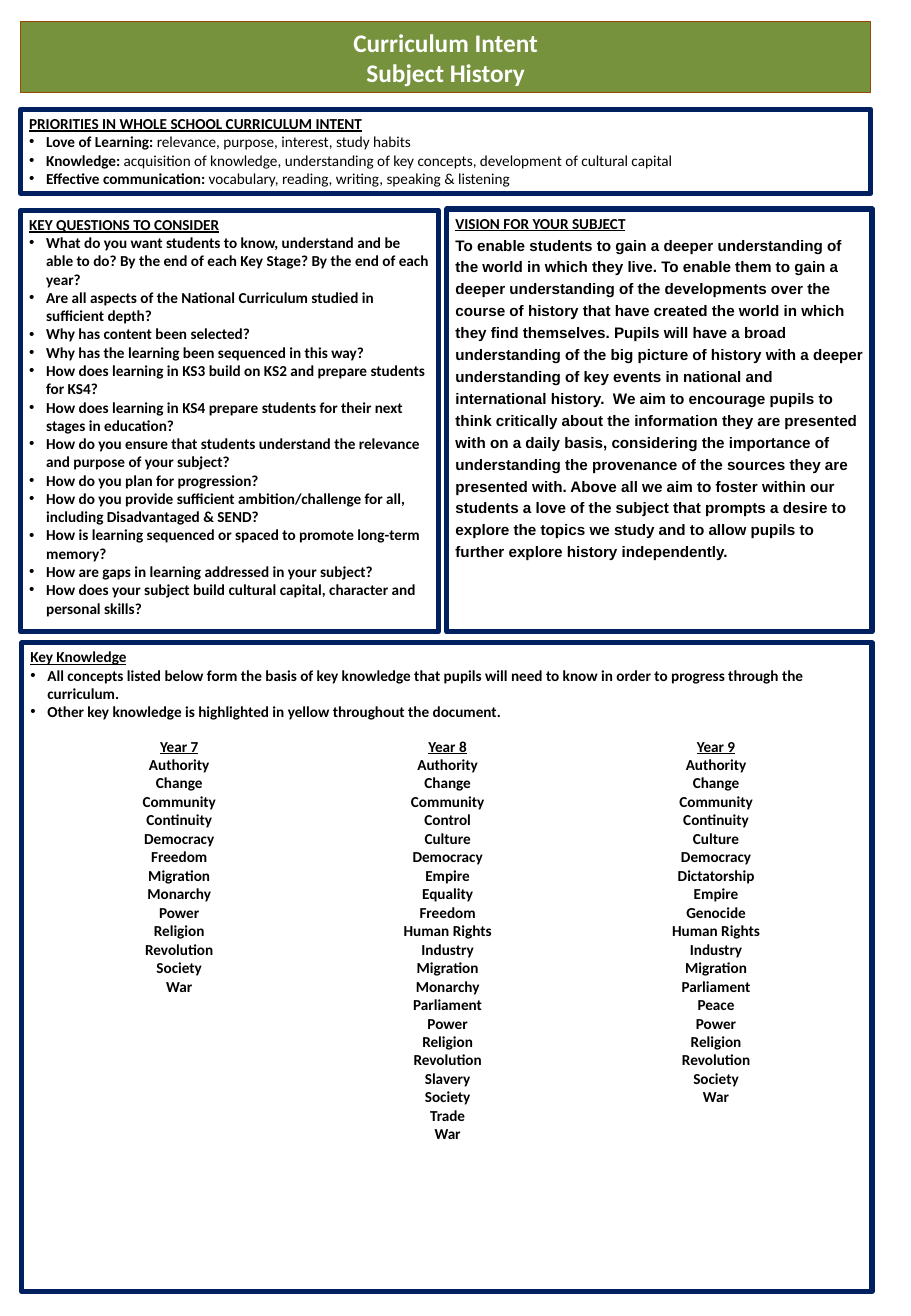
import dataclasses

import lxml.etree
import pptx
import pptx.dml.color
import pptx.enum.shapes
import pptx.enum.text
import pptx.oxml.ns
import pptx.util

Inches = pptx.util.Inches
Pt = pptx.util.Pt
ALIGN = pptx.enum.text.PP_ALIGN
ANCHOR = pptx.enum.text.MSO_ANCHOR


def rgb(code: str) -> pptx.dml.color.RGBColor:
    return pptx.dml.color.RGBColor.from_string(code)


@dataclasses.dataclass(frozen=True)
class Theme:
    green: str = "76923C"
    brown: str = "974806"
    navy: str = "002060"
    white: str = "FFFFFF"
    black: str = "000000"
    main: str = "Calibri"
    prose: str = "Arial"
    title: float = 15
    body: float = 9


THEME = Theme()


@dataclasses.dataclass(frozen=True)
class Line:
    """One paragraph: a bold lead, then an optional plain rest."""
    lead: str
    rest: str = ""
    under: bool = False
    bullet: bool = False
    align: ALIGN = ALIGN.LEFT
    face: str = THEME.main
    size: float = THEME.body
    ink: str = THEME.black
    space: float = 1.0


@dataclasses.dataclass(frozen=True)
class Panel:
    left: float
    top: float
    width: float
    height: float
    lines: list[Line]
    fill: str = THEME.white
    edge: str = THEME.navy
    weight: float = 3
    anchor: ANCHOR = ANCHOR.TOP


def head(text: str) -> Line:
    return Line(text, under=True)


def point(lead: str, rest: str = "") -> Line:
    return Line(lead, rest, bullet=True)


def banner(text: str) -> Line:
    return Line(text, align=ALIGN.CENTER, size=THEME.title, ink=THEME.white)


PANELS = [
    Panel(0.17, 0.18, 7, 0.58, [banner("Curriculum Intent"), banner("Subject History")],
          THEME.green, THEME.brown, 0.75, ANCHOR.MIDDLE),
    Panel(0.17, 0.9, 7, 0.69, [
        head("PRIORITIES IN WHOLE SCHOOL CURRICULUM INTENT"),
        point("Love of Learning: ", "relevance, purpose, interest, study habits"),
        point("Knowledge: ", "acquisition of knowledge, understanding of key concepts, "
              "development of cultural capital"),
        point("Effective communication: ", "vocabulary, reading, writing, speaking & listening"),
    ]),
    Panel(0.17, 1.73, 3.44, 3.47, [head("KEY QUESTIONS TO CONSIDER")] + [point(ask) for ask in (
        "What do you want students to know, understand and be able to do? "
        "By the end of each Key Stage? By the end of each year?",
        "Are all aspects of the National Curriculum studied in sufficient depth?",
        "Why has content been selected?",
        "Why has the learning been sequenced in this way?",
        "How does learning in KS3 build on KS2 and prepare students for KS4?",
        "How does learning in KS4 prepare students for their next stages in education?",
        "How do you ensure that students understand the relevance and purpose of your subject?",
        "How do you plan for progression?",
        "How do you provide sufficient ambition/challenge for all, "
        "including Disadvantaged & SEND?",
        "How is learning sequenced or spaced to promote long-term memory?",
        "How are gaps in learning addressed in your subject?",
        "How does your subject build cultural capital, character and personal skills?",
    )]),
    Panel(3.68, 1.72, 3.5, 3.48, [
        head("VISION FOR YOUR SUBJECT"),
        Line("To enable students to gain a deeper understanding of the world in which they live. "
             "To enable them to gain a deeper understanding of the developments over the course "
             "of history that have created the world in which they find themselves. Pupils will "
             "have a broad understanding of the big picture of history with a deeper "
             "understanding of key events in national and international history.  We aim to "
             "encourage pupils to think critically about the information they are presented with "
             "on a daily basis, considering the importance of understanding the provenance of "
             "the sources they are presented with. Above all we aim to foster within our "
             "students a love of the subject that prompts a desire to explore the topics we "
             "study and to allow pupils to further explore history independently.",
             face=THEME.prose, space=1.2),
    ]),
    Panel(0.18, 5.29, 7, 5.34, [
        head("Key Knowledge"),
        point("All concepts listed below form the basis of key knowledge that pupils will need "
              "to know in order to progress through the curriculum."),
        point("Other key knowledge is highlighted in yellow throughout the document."),
    ]),
]

YEARS = {
    "Year 7": "Authority, Change, Community, Continuity, Democracy, Freedom, Migration, "
              "Monarchy, Power, Religion, Revolution, Society, War",
    "Year 8": "Authority, Change, Community, Control, Culture, Democracy, Empire, Equality, "
              "Freedom, Human Rights, Industry, Migration, Monarchy, Parliament, Power, "
              "Religion, Revolution, Slavery, Society, Trade, War",
    "Year 9": "Authority, Change, Community, Continuity, Culture, Democracy, Dictatorship, "
              "Empire, Genocide, Human Rights, Industry, Migration, Parliament, Peace, Power, "
              "Religion, Revolution, Society, War",
}


def add_bullet(para) -> None:
    props = para._p.get_or_add_pPr()
    props.set("marL", str(Inches(0.14)))
    props.set("indent", str(Inches(-0.14)))
    qn = pptx.oxml.ns.qn
    tint = lxml.etree.SubElement(props, qn("a:buClr"))
    lxml.etree.SubElement(tint, qn("a:srgbClr"), val=THEME.black)
    lxml.etree.SubElement(props, qn("a:buFont"), typeface=THEME.prose)
    lxml.etree.SubElement(props, qn("a:buChar"), char="•")


def write(frame, lines: list[Line]) -> None:
    frame.word_wrap = True
    for index, line in enumerate(lines):
        para = frame.add_paragraph() if index else frame.paragraphs[0]
        if line.bullet:
            add_bullet(para)
        para.alignment = line.align
        para.line_spacing = line.space
        font = para.font
        font.name, font.size = line.face, Pt(line.size)
        font.color.rgb = rgb(line.ink)
        font.underline = line.under
        lead = para.add_run()
        lead.text = line.lead
        if line.rest:
            lead.font.bold = True
            para.add_run().text = line.rest
        else:
            font.bold = True


def add_panel(slide, panel: Panel) -> None:
    spot = map(Inches, (panel.left, panel.top, panel.width, panel.height))
    shape = slide.shapes.add_shape(pptx.enum.shapes.MSO_SHAPE.RECTANGLE, *spot)
    shape.shadow.inherit = False
    shape.fill.solid()
    shape.fill.fore_color.rgb = rgb(panel.fill)
    shape.line.color.rgb = rgb(panel.edge)
    shape.line.width = Pt(panel.weight)
    frame = shape.text_frame
    frame.margin_left = frame.margin_right = Inches(0.07)
    frame.margin_top = frame.margin_bottom = Inches(0.04)
    frame.vertical_anchor = panel.anchor
    write(frame, panel.lines)


def add_years(slide, years: dict[str, str]) -> None:
    spot = map(Inches, (0.37, 6.02, 6.63, 3.55))
    table = slide.shapes.add_table(1, len(years), *spot).table
    table.first_row = table.horz_banding = False
    for cell, (year, words) in zip(table.rows[0].cells, years.items()):
        cell.fill.background()
        lines = [head(year)] + [Line(word) for word in words.split(", ")]
        write(cell.text_frame,
              [dataclasses.replace(line, align=ALIGN.CENTER) for line in lines])


def main() -> None:
    deck = pptx.Presentation()
    deck.slide_width, deck.slide_height = Inches(7.5), Inches(10.83)
    slide = deck.slides.add_slide(deck.slide_layouts[6])
    for panel in PANELS:
        add_panel(slide, panel)
    add_years(slide, YEARS)
    deck.save("out.pptx")


if __name__ == "__main__":
    main()
